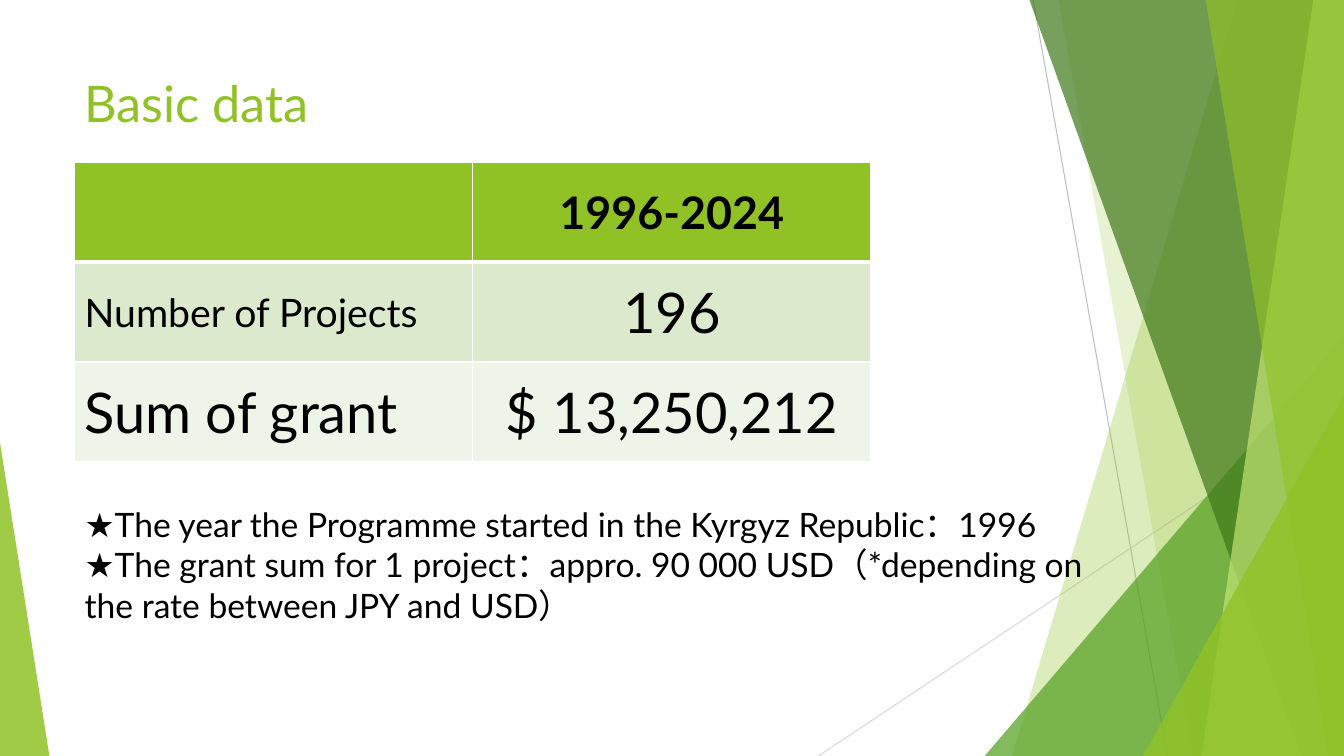
from dataclasses import dataclass
from typing import Any

from lxml.etree import SubElement
from pptx import Presentation
from pptx.dml.color import RGBColor
from pptx.enum.shapes import MSO_CONNECTOR, MSO_SHAPE
from pptx.enum.text import MSO_ANCHOR as Anchor, MSO_AUTO_SIZE as AutoSize, PP_ALIGN as Align
from pptx.oxml import parse_xml
from pptx.oxml.ns import nsdecls, qn
from pptx.util import Pt

WIDTH, HEIGHT = 960, 540
BLEED_TOP = -0.72
LEFT = 53.3


@dataclass(frozen=True)
class Theme:
    font: str = "Lato"
    lime: str = "90C226"
    green: str = "54A021"
    forest: str = "3F7819"
    pale_lime: str = "C0E474"
    band_dark: str = "DBE9CD"
    band_light: str = "EEF4E8"
    border: str = "FFFFFF"
    text: str = "000000"
    ray_dark: str = "BFBFBF"
    ray_light: str = "D9D9D9"
    title_size: float = 36
    header_size: float = 32
    label_size: float = 28
    figure_size: float = 40
    note_size: float = 24


THEME = Theme()


@dataclass(frozen=True)
class Ray:
    start: tuple[float, float]
    end: tuple[float, float]
    color: str


@dataclass(frozen=True)
class Panel:
    """A slanted panel that reaches the right edge of the slide."""
    top_x: float
    bottom_x: float
    color: str
    opacity: int


@dataclass(frozen=True)
class Wedge:
    """A triangle standing on the bottom edge, its apex over one corner."""
    left: float
    top: float
    width: float
    apex: float
    color: str
    opacity: int


@dataclass(frozen=True)
class Entry:
    text: str
    size: float
    align: Align = Align.LEFT
    bold: bool = False


@dataclass(frozen=True)
class Band:
    fill: str
    entries: tuple[Entry, Entry]


RAYS = (
    Ray((738, 0), (834, HEIGHT), THEME.ray_dark),
    Ray((WIDTH, 290), (584.6, HEIGHT), THEME.ray_light),
)
FACETS = (
    Panel(884.2, 722.9, THEME.lime, 30),
    Panel(756, 851.8, THEME.lime, 20),
    Wedge(703.4, 239.8, 256.6, 1, THEME.green, 72),
    Panel(735.1, 929.5, THEME.forest, 70),
    Panel(938.2, 858.2, THEME.pale_lime, 70),
    Panel(861.1, 949, THEME.lime, 65),
    Wedge(816.5, 283, 143.5, 1, THEME.lime, 80),
    Wedge(0, 316.1, 35.3, 0, THEME.lime, 85),
)
BANDS = (
    Band(THEME.lime, (Entry("", THEME.header_size),
                      Entry("1996-2024", THEME.header_size, Align.CENTER, True))),
    Band(THEME.band_dark, (Entry("Number of Projects", THEME.label_size),
                           Entry("196", THEME.figure_size, Align.CENTER))),
    Band(THEME.band_light, (Entry("Sum of grant", THEME.figure_size),
                            Entry("$ 13,250,212", THEME.figure_size, Align.CENTER))),
)
NOTES = (
    "★The year the Programme started in the Kyrgyz Republic：1996",
    "★The grant sum for 1 project：appro. 90 000 USD（*depending on the rate between JPY and USD）",
)


def apply(target: Any, formats: dict[str, Any]) -> None:
    for attribute, value in formats.items():
        setattr(target, attribute, value)


def write(paragraph: Any, entry: Entry, color: str = THEME.text) -> None:
    paragraph.alignment = entry.align
    if entry.text:
        run = paragraph.add_run()
        run.text = entry.text
        apply(run.font, {"name": THEME.font, "size": Pt(entry.size), "bold": entry.bold})
        run.font.color.rgb = RGBColor.from_string(color)


def draw_ray(slide: Any, ray: Ray) -> None:
    line = slide.shapes.add_connector(
        MSO_CONNECTOR.STRAIGHT, *(Pt(value) for value in ray.start + ray.end))
    line.line.width = Pt(0.75)
    line.line.color.rgb = RGBColor.from_string(ray.color)
    SubElement(line.element.spPr, qn("a:effectLst"))


def draw_facet(slide: Any, facet: Panel | Wedge) -> None:
    if isinstance(facet, Panel):
        builder = slide.shapes.build_freeform(Pt(facet.top_x), Pt(BLEED_TOP))
        corners = ((WIDTH, BLEED_TOP), (WIDTH, HEIGHT), (facet.bottom_x, HEIGHT))
        builder.add_line_segments([(Pt(x), Pt(y)) for x, y in corners], close=True)
        shape = builder.convert_to_shape()
    else:
        shape = slide.shapes.add_shape(
            MSO_SHAPE.ISOSCELES_TRIANGLE, Pt(facet.left), Pt(facet.top),
            Pt(facet.width), Pt(HEIGHT - facet.top))
        shape.adjustments[0] = facet.apex
    shape.shadow.inherit = False
    shape.line.fill.background()
    shape.fill.solid()
    shape.fill.fore_color.rgb = RGBColor.from_string(facet.color)
    color = shape.element.spPr.find(qn("a:solidFill"))[0]
    SubElement(color, qn("a:alpha"), val=str(facet.opacity * 1000))


def set_borders(cell: Any, widths: dict[str, float]) -> None:
    """Put border lines ahead of the cell's fill, as the schema asks."""
    properties = cell._tc.get_or_add_tcPr()
    for index, (side, width) in enumerate(widths.items()):
        properties.insert(index, parse_xml(
            f'<a:ln{side} {nsdecls("a")} w="{Pt(width)}"><a:solidFill>'
            f'<a:srgbClr val="{THEME.border}"/></a:solidFill></a:ln{side}>'))


def draw_table(slide: Any) -> None:
    table = slide.shapes.add_table(
        len(BANDS), 2, Pt(LEFT), Pt(116), Pt(568.8), Pt(213.9)).table
    for row, band in enumerate(BANDS):
        for column, entry in enumerate(band.entries):
            cell = table.cell(row, column)
            cell.vertical_anchor = Anchor.MIDDLE
            cell.fill.solid()
            cell.fill.fore_color.rgb = RGBColor.from_string(band.fill)
            set_borders(cell, {"L": 1, "R": 1, "T": 3 if row == 1 else 1,
                               "B": 3 if row == 0 else 1})
            write(cell.text_frame.paragraphs[0], entry)


def place(placeholder: Any, left: float, top: float, width: float, height: float) -> Any:
    """Set the box, bring it to the front and return its text frame."""
    apply(placeholder, {"left": Pt(left), "top": Pt(top),
                        "width": Pt(width), "height": Pt(height)})
    placeholder.element.getparent().append(placeholder.element)
    frame = placeholder.text_frame
    apply(frame, {"word_wrap": True, "auto_size": AutoSize.NONE,
                  "vertical_anchor": Anchor.TOP})
    return frame


def write_notes(frame: Any) -> None:
    for index, note in enumerate(NOTES):
        paragraph = frame.add_paragraph() if index else frame.paragraphs[0]
        apply(paragraph, {"space_before": Pt(0), "space_after": Pt(0), "line_spacing": 1.0})
        write(paragraph, Entry(note, THEME.note_size))
        properties = paragraph._p.get_or_add_pPr()
        properties.set("marL", "0")
        properties.set("indent", "0")
        SubElement(properties, qn("a:buNone"))


def main() -> None:
    deck = Presentation()
    apply(deck, {"slide_width": Pt(WIDTH), "slide_height": Pt(HEIGHT)})
    slide = deck.slides.add_slide(deck.slide_layouts[1])
    for ray in RAYS:
        draw_ray(slide, ray)
    for facet in FACETS:
        draw_facet(slide, facet)
    heading = place(slide.shapes.title, LEFT, 48.2, 676.8, 103.7)
    write(heading.paragraphs[0], Entry("Basic data", THEME.title_size), THEME.lime)
    draw_table(slide)
    write_notes(place(slide.placeholders[1], LEFT, 356.4, 763.9, 167.8))
    deck.save("out.pptx")


if __name__ == "__main__":
    main()
